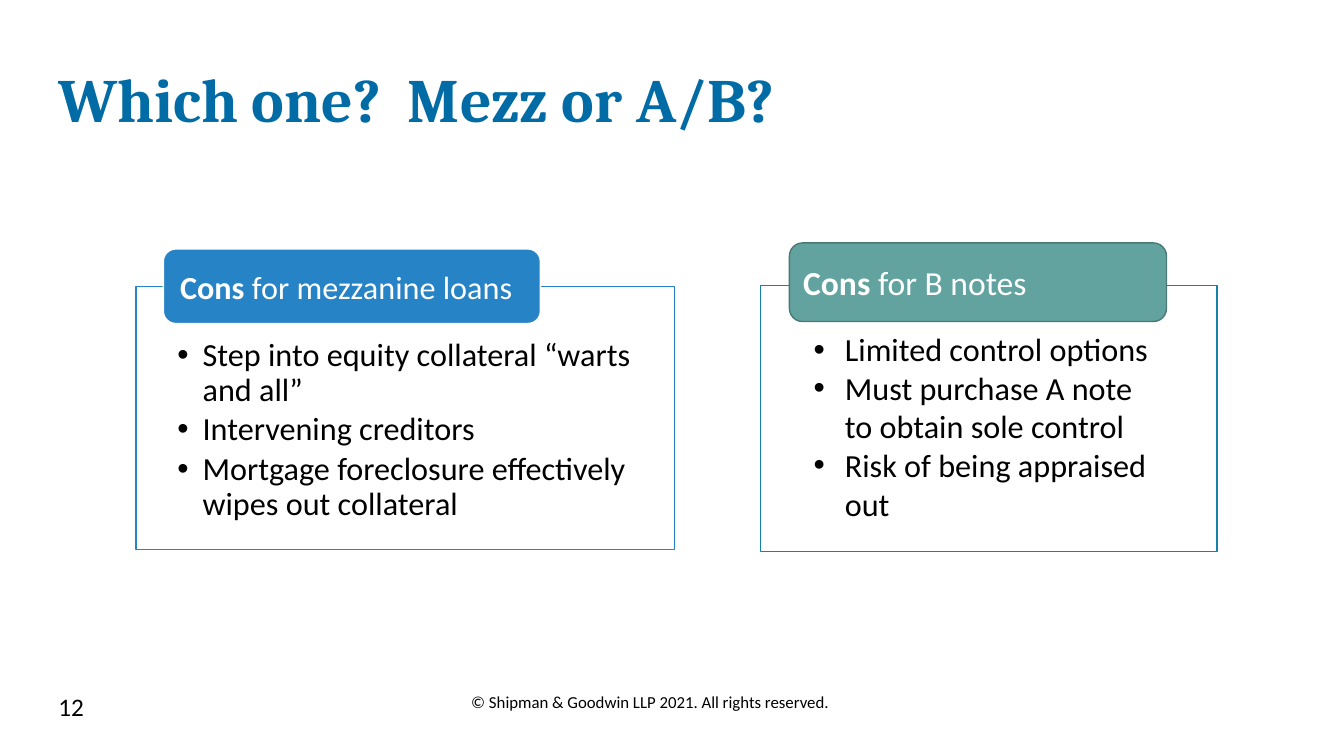
from lxml import etree
from pptx import Presentation
from pptx.dml.color import RGBColor
from pptx.enum.shapes import MSO_SHAPE
from pptx.enum.text import MSO_ANCHOR, PP_ALIGN
from pptx.oxml.ns import qn
from pptx.util import Inches, Pt

RECTANGLE = MSO_SHAPE.RECTANGLE
ROUNDED = MSO_SHAPE.ROUNDED_RECTANGLE
TOP, MIDDLE = MSO_ANCHOR.TOP, MSO_ANCHOR.MIDDLE
LEFT, CENTER = PP_ALIGN.LEFT, PP_ALIGN.CENTER


def color(value):
    return RGBColor.from_string(value)


def style_span(span, size, value, bold=False, name="Calibri"):
    span.font.name = name
    span.font.size = Pt(size)
    span.font.bold = bold
    span.font.color.rgb = color(value)


def set_frame(frame, anchor, insets=(0.1, 0.05, 0.1, 0.05)):
    frame.word_wrap = True
    frame.vertical_anchor = anchor
    (frame.margin_left, frame.margin_top,
     frame.margin_right, frame.margin_bottom) = map(Inches, insets)


def add_label(page, box, text, size, value="000000", align=LEFT,
              anchor=TOP, bold=False, name="Calibri"):
    label = page.shapes.add_textbox(*map(Inches, box))
    set_frame(label.text_frame, anchor)
    para = label.text_frame.paragraphs[0]
    para.text = text
    para.alignment = align
    style_span(para.runs[0], size, value, bold, name)


def add_box(page, kind, box, fill, line):
    shape = page.shapes.add_shape(kind, *map(Inches, box))
    shape.shadow.inherit = False
    shape.fill.solid()
    shape.fill.fore_color.rgb = color(fill)
    shape.line.color.rgb = color(line)
    shape.line.width = Pt(1)
    return shape


def add_bullet(para, indent):
    properties = para._p.get_or_add_pPr()
    properties.set("marL", str(Inches(indent)))
    properties.set("indent", str(-Inches(indent)))
    etree.SubElement(properties, qn("a:buFont")).set("typeface", "Arial")
    etree.SubElement(properties, qn("a:buChar")).set("char", "•")


def add_panel(page, box, line, items, insets, indent, spacing, after):
    """Outlined panel with a bulleted list."""
    panel = add_box(page, RECTANGLE, box, "FFFFFF", line)
    frame = panel.text_frame
    set_frame(frame, TOP, insets)
    frame.text = "\n".join(items)
    for para in frame.paragraphs:
        add_bullet(para, indent)
        para.alignment = LEFT
        para.line_spacing = spacing
        para.space_after = Pt(after)
        for span in para.runs:
            style_span(span, 23, "000000")


def add_heading(page, box, fill, line, subject, size, inset):
    """Rounded tab that straddles the top edge of a panel."""
    heading = add_box(page, ROUNDED, box, fill, line)
    set_frame(heading.text_frame, MIDDLE, (inset, 0, inset, 0))
    para = heading.text_frame.paragraphs[0]
    para.alignment = LEFT
    for text, bold in (("Cons", True), (f" for {subject}", False)):
        span = para.add_run()
        span.text = text
        style_span(span, size, "FFFFFF", bold)


def add_mezzanine(page, left, top):
    add_panel(page, (left, top, 5.34, 2.61), "2683C6",
              ["Step into equity collateral “warts and all”",
               "Intervening creditors",
               "Mortgage foreclosure effectively wipes out collateral"],
              (0.41, 0.52, 0.41, 0.18), 0.25, 0.9, 3.5)
    add_heading(page, (left + 0.27, top - 0.37, 3.74, 0.74),
                "2683C6", "FFFFFF", "mezzanine loans", 23, 0.13)


def add_b_notes(page, left, top):
    add_panel(page, (left, top, 4.53, 2.64), "1580A9",
              ["Limited control options",
               "Must purchase A note \vto obtain sole control",
               "Risk of being appraised out"],
              (0.53, 0.44, 0.27, 0.2), 0.31, 1.0, 0)
    add_heading(page, (left + 0.29, top - 0.42, 3.74, 0.78),
                "62A39F", "497976", "B notes", 24, 0.1)


def add_footer(page, left, top):
    add_label(page, (left, top, 3, 0.4), "12", 18)
    add_label(page, (left + 3.72, top, 4.5, 0.4),
              "© Shipman & Goodwin LLP 2021. All rights reserved.",
              12, align=CENTER)


def main():
    deck = Presentation()
    deck.slide_width, deck.slide_height = Inches(13.33), Inches(7.5)
    page = deck.slides.add_slide(deck.slide_layouts[6])

    # Title
    add_label(page, (0.48, 0.2, 12.42, 1.54), "Which one?  Mezz or A/B?", 44,
              "006BA4", anchor=MIDDLE, bold=True, name="Cambria")
    # Two lists of drawbacks
    add_mezzanine(page, 1.35, 2.84)
    add_b_notes(page, 7.54, 2.83)
    # Page number and copyright
    add_footer(page, 0.48, 6.81)

    deck.save("out.pptx")


if __name__ == "__main__":
    main()
